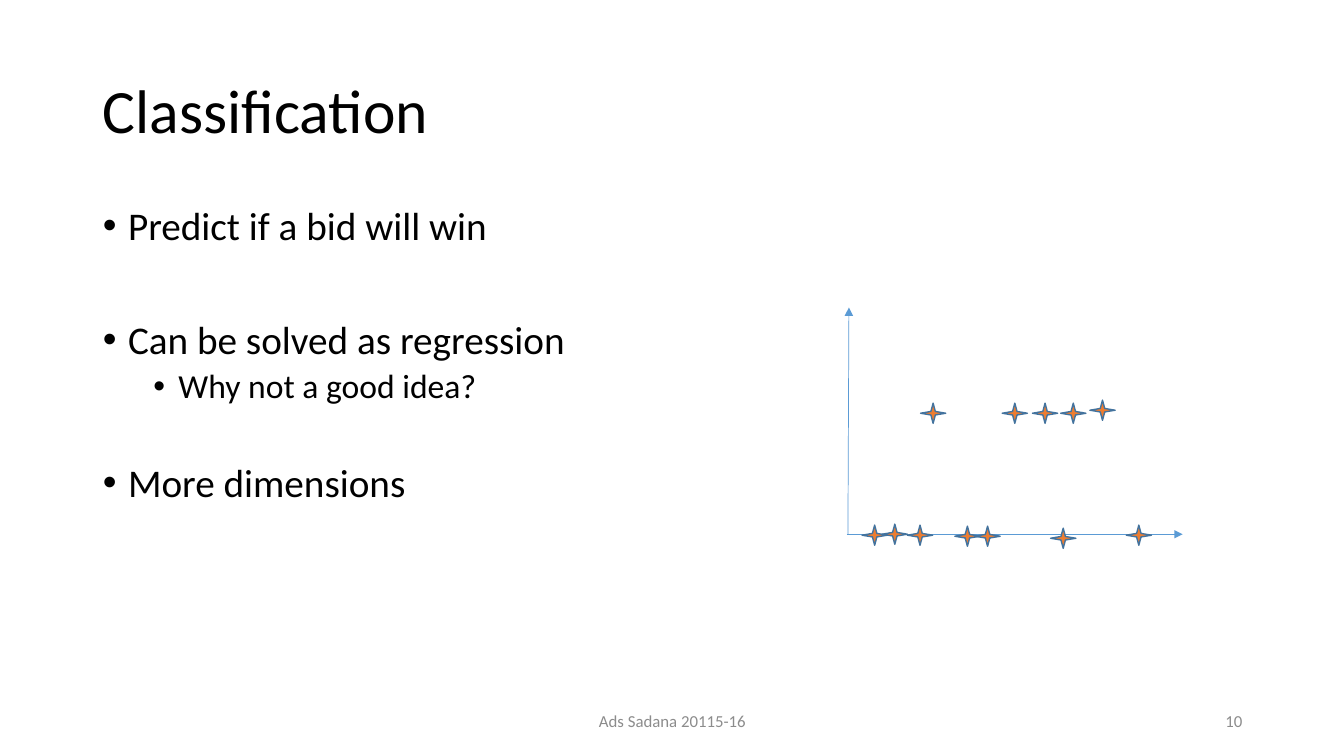
import pptx
import pptx.util
import pptx.dml.color
import pptx.enum.shapes
import pptx.enum.text
import pptx.oxml.ns
import lxml.etree

PX = 9144  # EMU per px, 100 px to the inch
THEME = {
    "font": "Calibri", "ink": "000000", "grey": "8C8C8C",
    "axis": "5B9BD5", "star": "ED7D31", "edge": "43739E",
    "title": 44, "item": 28, "sub": 24, "foot": 12,
}
ALIGN = pptx.enum.text.PP_ALIGN
ANCHOR = pptx.enum.text.MSO_ANCHOR
Pt = pptx.util.Pt
qn = pptx.oxml.ns.qn


def rgb(name):
    return pptx.dml.color.RGBColor.from_string(THEME[name])


def write(para, text, size, ink, form):
    run = para.add_run()
    run.text = text
    run.font.color.rgb = rgb(ink)
    for key, val in {"name": THEME["font"], "size": Pt(THEME[size])}.items():
        setattr(run.font, key, val)
    for key, val in form.items():
        setattr(para, key, val)


deck = pptx.Presentation()
deck.slide_width, deck.slide_height = 1333 * PX, 750 * PX
slide = deck.slides.add_slide(deck.slide_layouts[1])
shapes = slide.shapes

# Title and body frames
title, body = slide.placeholders
frames = [
    (title, (92, 40, 1150, 145), ANCHOR.MIDDLE),
    (body, (92, 200, 1150, 476), ANCHOR.TOP),
]
for holder, box, anchor in frames:
    for key, val in zip(("left", "top", "width", "height"), box):
        setattr(holder, key, val * PX)
    form = {"word_wrap": True, "vertical_anchor": anchor,
            "auto_size": pptx.enum.text.MSO_AUTO_SIZE.NONE}
    for key, val in form.items():
        setattr(holder.text_frame, key, val)

write(title.text_frame.paragraphs[0], "Classification", "title", "ink",
      {"alignment": ALIGN.LEFT, "line_spacing": 0.9})

# Bulleted list: text, level, space before in points
items = [
    ("Predict if a bid will win", 0, 10),
    ("Can be solved as regression", 0, 51),
    ("Why not a good idea?", 1, 5),
    ("More dimensions", 0, 41),
]
for num, (text, level, gap) in enumerate(items):
    frame = body.text_frame
    para = frame.add_paragraph() if num else frame.paragraphs[0]
    write(para, text, "sub" if level else "item", "ink",
          {"level": level, "line_spacing": 0.9, "space_before": Pt(gap)})
    props = para._p.get_or_add_pPr()
    props.set("marL", str((25 + 50 * level) * PX))
    props.set("indent", str(-25 * PX))
    lxml.etree.SubElement(props, qn("a:buFont"), typeface="Arial")
    lxml.etree.SubElement(props, qn("a:buChar"), char="•")

# Chart axes
for ends in [(840, 530, 1173, 530), (841, 530, 842, 305)]:
    axis = shapes.add_connector(pptx.enum.shapes.MSO_CONNECTOR.STRAIGHT,
                                *[end * PX for end in ends])
    axis.line.color.rgb = rgb("axis")
    axis.line.width = Pt(0.5)
    lxml.etree.SubElement(axis.line._ln, qn("a:tailEnd"), type="triangle")
    lxml.etree.SubElement(axis._element.spPr, qn("a:effectLst"))

# Lost bids along the axis, won bids above
lost = [(875, 520), (900, 521), (947, 522), (855, 521),
        (967, 522), (1117, 521), (1042, 524)]
won = [(913, 400), (994, 400), (1024, 400), (1081, 397), (1052, 400)]
for left, top in lost + won:
    star = shapes.add_shape(pptx.enum.shapes.MSO_SHAPE.STAR_4_POINT,
                            left * PX, top * PX, 25 * PX, 20 * PX)
    star.adjustments[0] = 0.125
    star.shadow.inherit = False
    star.fill.solid()
    star.fill.fore_color.rgb = rgb("star")
    star.line.color.rgb = rgb("edge")
    star.line.width = Pt(1)

# Footer and page number
notes = [
    ("Ads Sadana 20115-16", 442, 450, ALIGN.CENTER),
    ("10", 942, 300, ALIGN.RIGHT),
]
for text, left, width, align in notes:
    box = shapes.add_textbox(left * PX, 695 * PX, width * PX, 40 * PX)
    for key, val in {"word_wrap": True,
                     "vertical_anchor": ANCHOR.MIDDLE}.items():
        setattr(box.text_frame, key, val)
    write(box.text_frame.paragraphs[0], text, "foot", "grey",
          {"alignment": align})

deck.save("out.pptx")
